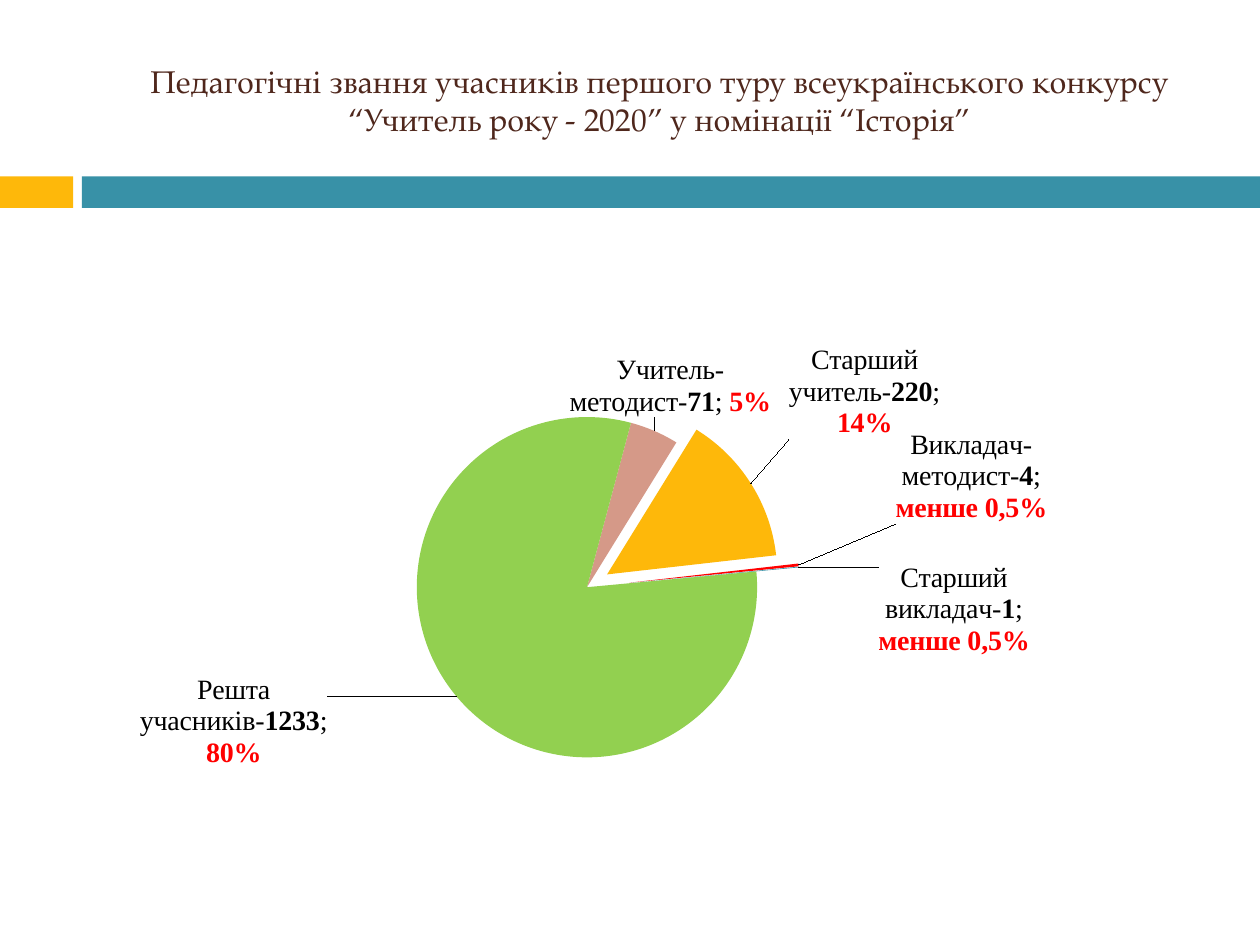
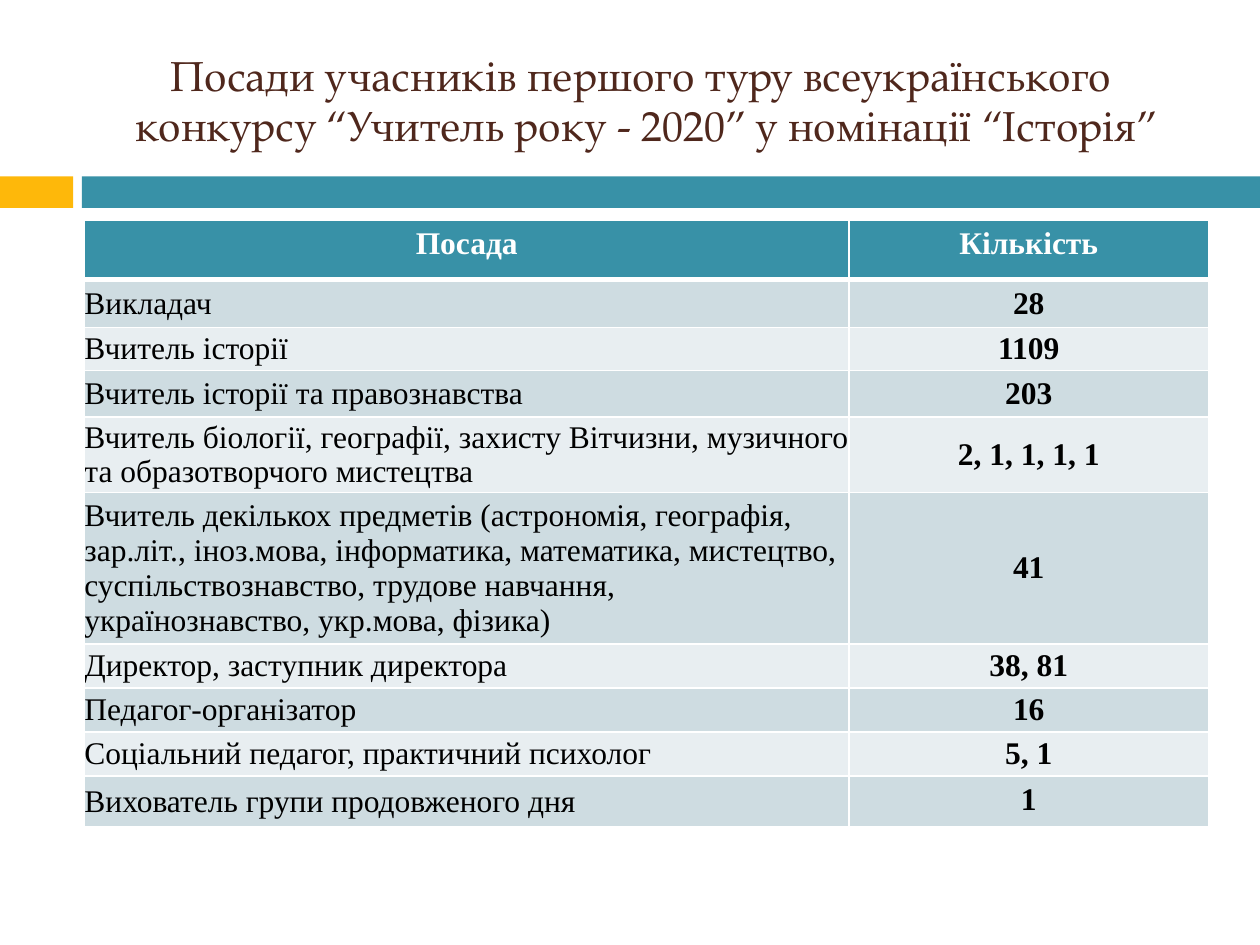
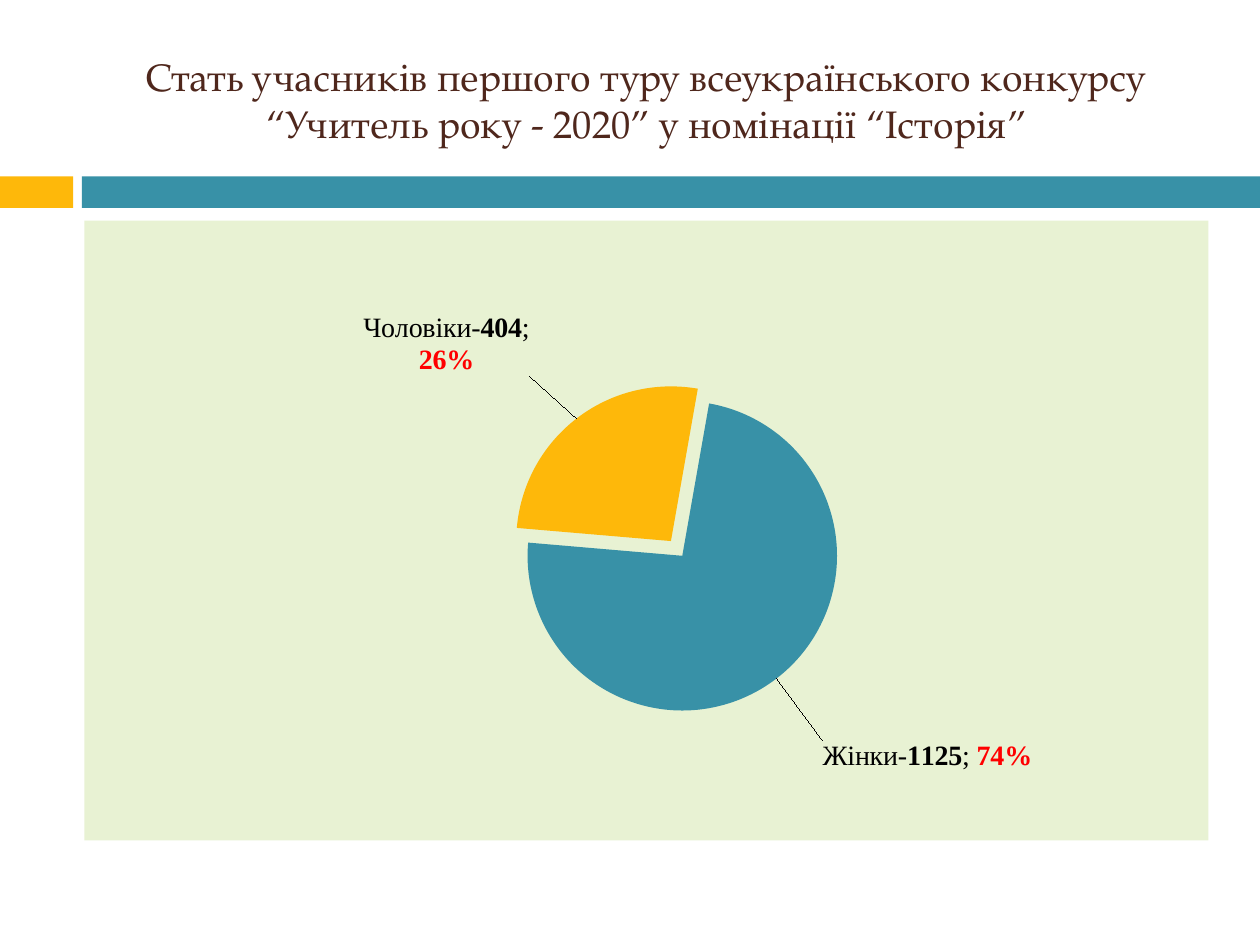
import dataclasses
import typing

import pptx
import pptx.chart.data
import pptx.dml.color
import pptx.enum.chart
import pptx.enum.shapes
import pptx.enum.text
import pptx.oxml
import pptx.oxml.ns
import pptx.util

PX = 9144


@dataclasses.dataclass(frozen=True)
class Theme:
    amber: str = "FEB80A"
    teal: str = "3891A7"
    brown: str = "4F271C"
    rose: str = "D59988"
    red: str = "FF0000"
    green: str = "92D050"
    pale_green: str = "E8F2D3"
    row_dark: str = "CEDCE1"
    row_light: str = "E8EEF1"
    white: str = "FFFFFF"
    black: str = "000000"
    title_font: str = "TeX Gyre Pagella"
    body_font: str = "Times New Roman"
    chart_font: str = "Calibri"
    chart_size: int = 10
    label_size: int = 16
    table_size: int = 18


THEME = Theme()


class Box(typing.NamedTuple):
    left: int
    top: int
    width: int
    height: int

    def emu(self) -> list[int]:
        return [v * PX for v in self]


class Band(typing.NamedTuple):
    box: Box
    color: str


class Title(typing.NamedTuple):
    lines: list[str]
    size: int
    width: int = 892


class Slice(typing.NamedTuple):
    name: str
    value: int
    share: str
    color: str
    explosion: int
    dx: int
    dy: int


@dataclasses.dataclass(frozen=True)
class Pie:
    box: Box
    start: int
    plot: tuple[float, float, float, float]
    slices: list[Slice]
    fill: str | None = None


class Row(typing.NamedTuple):
    post: str
    count: str
    height: int


BANDS = [
    Band(Box(0, 140, 58, 25), THEME.amber),
    Band(Box(65, 140, 935, 25), THEME.teal),
]

RANKS = Pie(
    Box(106, 225, 819, 449), 15, (0.049, 0.161, 0.781, 0.752),
    [
        Slice("Учитель-методист", 71, "5%", THEME.rose, 0, -70, -5),
        Slice("Старший учитель", 220, "14%", THEME.amber, 14, 25, -32),
        Slice("Викладач-методист", 4, "менше 0,5%", THEME.red, 25, 71, -32),
        Slice("Старший викладач", 1, "менше 0,5%", THEME.teal, 25, 57, 72),
        Slice("Решта учасників", 1233, "80%", THEME.green, 0, -98, -22),
    ],
)

GENDERS = Pie(
    Box(67, 175, 892, 492), 10, (0.21, 0.229, 0.644, 0.624),
    [
        Slice("Жінки", 1125, "74%", THEME.teal, 0, 33, 45),
        Slice("Чоловіки", 404, "26%", THEME.amber, 12, -34, -29),
    ],
    THEME.pale_green,
)

POSTS = [
    Row("Посада", "Кількість", 47),
    Row("Викладач", "28", 38),
    Row("Вчитель історії", "1109", 34),
    Row("Вчитель історії та правознавства", "203", 37),
    Row("Вчитель біології, географії, захисту Вітчизни, музичного та "
        "образотворчого мистецтва", "2, 1, 1, 1, 1", 30),
    Row("Вчитель декількох предметів (астрономія, географія, зар.літ., "
        "іноз.мова, інформатика, математика, мистецтво, суспільствознавство, "
        "трудове навчання, українознавство, укр.мова, фізика)", "41", 63),
    Row("Директор, заступник директора", "38, 81", 35),
    Row("Педагог-організатор", "16", 35),
    Row("Соціальний педагог, практичний психолог", "5, 1", 35),
    Row("Вихователь групи продовженого дня", "1", 38),
]


def rgb(color: str) -> pptx.dml.color.RGBColor:
    return pptx.dml.color.RGBColor.from_string(color)


def xml(tag: str, body: str = "", attrs: str = ""):
    ns = pptx.oxml.ns.nsdecls("a", "c")
    return pptx.oxml.parse_xml(f"<{tag} {ns} {attrs}>{body}</{tag}>")


def val(tag: str, value: int):
    return xml(tag, attrs=f'val="{value}"')


def add_run(p, text: str, font: str, size: int, color: str, bold: bool = False) -> None:
    r = p.add_run()
    r.text = text
    r.font.name = font
    r.font.size = pptx.util.Pt(size)
    r.font.bold = bold
    r.font.color.rgb = rgb(color)


def add_slide(prs, title: Title):
    s = prs.slides.add_slide(prs.slide_layouts[6])
    for band in BANDS:
        sp = s.shapes.add_shape(pptx.enum.shapes.MSO_SHAPE.RECTANGLE, *band.box.emu())
        sp.shadow.inherit = False
        sp.fill.solid()
        sp.fill.fore_color.rgb = rgb(band.color)
        sp.line.fill.background()
    tf = s.shapes.add_textbox(*Box(67, 25, title.width, 108).emu()).text_frame
    tf.word_wrap = True
    tf.vertical_anchor = pptx.enum.text.MSO_ANCHOR.MIDDLE
    p = tf.paragraphs[0]
    p.alignment = pptx.enum.text.PP_ALIGN.CENTER
    for i, line in enumerate(title.lines):
        if i:
            p.add_line_break()
        add_run(p, line, THEME.title_font, title.size, THEME.brown)
    return s


def manual_layout(x: float, y: float, extent: str = "", target: str = ""):
    return xml("c:layout", f'<c:manualLayout>{target}<c:x val="{x:.3f}"/>'
                           f'<c:y val="{y:.3f}"/>{extent}</c:manualLayout>')


def add_slice(series, i: int, part: Slice) -> None:
    point = series.points[i]
    point.format.fill.solid()
    point.format.fill.fore_color.rgb = rgb(part.color)
    point.format.line.fill.background()
    p = point.data_label.text_frame.paragraphs[0]
    for text, color, bold in (
        (f"{part.name}-", THEME.black, False),
        (str(part.value), THEME.black, True),
        ("; ", THEME.black, False),
        (part.share, THEME.red, True),
    ):
        add_run(p, text, THEME.body_font, THEME.label_size, color, bold)
    point.data_label.position = pptx.enum.chart.XL_LABEL_POSITION.BEST_FIT


def style_labels(series) -> None:
    labels = series.data_labels
    labels.show_value = True
    labels.show_percentage = True
    labels.show_category_name = True
    labels.position = pptx.enum.chart.XL_LABEL_POSITION.BEST_FIT
    labels.font.name = THEME.body_font
    labels.font.size = pptx.util.Pt(THEME.label_size)
    labels.font.color.rgb = rgb(THEME.black)


def place_parts(chart, pie: Pie) -> None:
    root = chart.element
    plot_area = root.xpath(".//c:plotArea")[0]
    for old in plot_area.xpath("./c:layout"):
        plot_area.remove(old)
    x, y, w, h = pie.plot
    target = ('<c:layoutTarget val="inner"/><c:xMode val="edge"/>'
              '<c:yMode val="edge"/>')
    extent = f'<c:w val="{w}"/><c:h val="{h}"/>'
    plot_area.insert(0, manual_layout(x, y, extent, target))

    pie_chart = root.xpath(".//c:pieChart")[0]
    for old in pie_chart.xpath("./c:firstSliceAng"):
        pie_chart.remove(old)
    pie_chart.append(val("c:firstSliceAng", pie.start))
    root.xpath(".//c:ser/c:tx")[0].addnext(val("c:explosion", 25))

    points = root.xpath(".//c:dPt/c:spPr")
    labels = root.xpath(".//c:dLbl")
    for part, sp_pr, label in zip(pie.slices, points, labels):
        sp_pr.addprevious(val("c:explosion", part.explosion))
        shift = manual_layout(part.dx / pie.box.width, part.dy / pie.box.height)
        label.xpath("./c:idx")[0].addnext(shift)
        for flag in label.xpath("./c:showCatName | ./c:showPercent"):
            flag.set("val", "1")

    fill = "<a:noFill/>"
    if pie.fill:
        fill = f'<a:solidFill><a:srgbClr val="{pie.fill}"/></a:solidFill>'
    frame = xml("c:spPr", f"{fill}<a:ln><a:noFill/></a:ln>")
    root.xpath("./c:chart")[0].addnext(frame)


def add_pie(s, pie: Pie) -> None:
    data = pptx.chart.data.CategoryChartData()
    data.categories = [part.name for part in pie.slices]
    data.add_series("Series 1", [part.value for part in pie.slices])
    chart = s.shapes.add_chart(
        pptx.enum.chart.XL_CHART_TYPE.PIE, *pie.box.emu(), data).chart
    chart.has_title = False
    chart.has_legend = False
    chart.font.name = THEME.chart_font
    chart.font.size = pptx.util.Pt(THEME.chart_size)
    chart.font.color.rgb = rgb(THEME.black)
    plot = chart.plots[0]
    plot.vary_by_categories = True
    series = plot.series[0]
    style_labels(series)
    for i, part in enumerate(pie.slices):
        add_slice(series, i, part)
    place_parts(chart, pie)


def add_borders(cell, bottom: int) -> None:
    tc_pr = cell._tc.get_or_add_tcPr()
    for i, (side, width) in enumerate(zip("LRTB", (1, 1, 1, bottom))):
        line = xml(
            f"a:ln{side}",
            f'<a:solidFill><a:srgbClr val="{THEME.white}"/></a:solidFill>',
            f'w="{pptx.util.Pt(width)}"')
        tc_pr.insert(i, line)


def add_cell(cell, text: str, header: bool, centred: bool, roomy: bool, fill: str) -> None:
    cell.fill.solid()
    cell.fill.fore_color.rgb = rgb(fill)
    if not roomy:
        cell.margin_left = cell.margin_right = 0
        cell.margin_top = cell.margin_bottom = 0
        cell.vertical_anchor = pptx.enum.text.MSO_ANCHOR.MIDDLE
    p = cell.text_frame.paragraphs[0]
    if centred:
        p.alignment = pptx.enum.text.PP_ALIGN.CENTER
    color = THEME.white if header else THEME.black
    add_run(p, text, THEME.body_font, THEME.table_size, color, centred)
    add_borders(cell, 3 if header else 1)


def add_posts_table(s, rows: list[Row]) -> None:
    widths = (607, 285)
    box = Box(67, 175, sum(widths), sum(row.height for row in rows))
    table = s.shapes.add_table(len(rows), len(widths), *box.emu()).table
    table.horz_banding = False
    for column, width in zip(table.columns, widths):
        column.width = width * PX
    for i, row in enumerate(rows):
        table.rows[i].height = row.height * PX
        header = i == 0
        last = i == len(rows) - 1
        band = THEME.row_dark if i % 2 else THEME.row_light
        fill = THEME.teal if header else band
        add_cell(table.cell(i, 0), row.post, header, header, header, fill)
        add_cell(table.cell(i, 1), row.count, header, True, header or last, fill)


def main() -> None:
    prs = pptx.Presentation()
    prs.slide_width = 1000 * PX
    prs.slide_height = 750 * PX

    s = add_slide(prs, Title(
        ["Педагогічні звання учасників першого туру всеукраїнського конкурсу "
         "“Учитель року - 2020” у номінації “Історія”"], 18, 913))
    add_pie(s, RANKS)

    s = add_slide(prs, Title(
        ["Посади учасників першого туру всеукраїнського ",
         "конкурсу “Учитель року - 2020” у номінації “Історія”"], 24))
    add_posts_table(s, POSTS)

    s = add_slide(prs, Title(
        ["Стать учасників першого туру всеукраїнського конкурсу "
         "“Учитель року - 2020” у номінації “Історія”"], 22))
    add_pie(s, GENDERS)

    prs.save("out.pptx")


if __name__ == "__main__":
    main()
